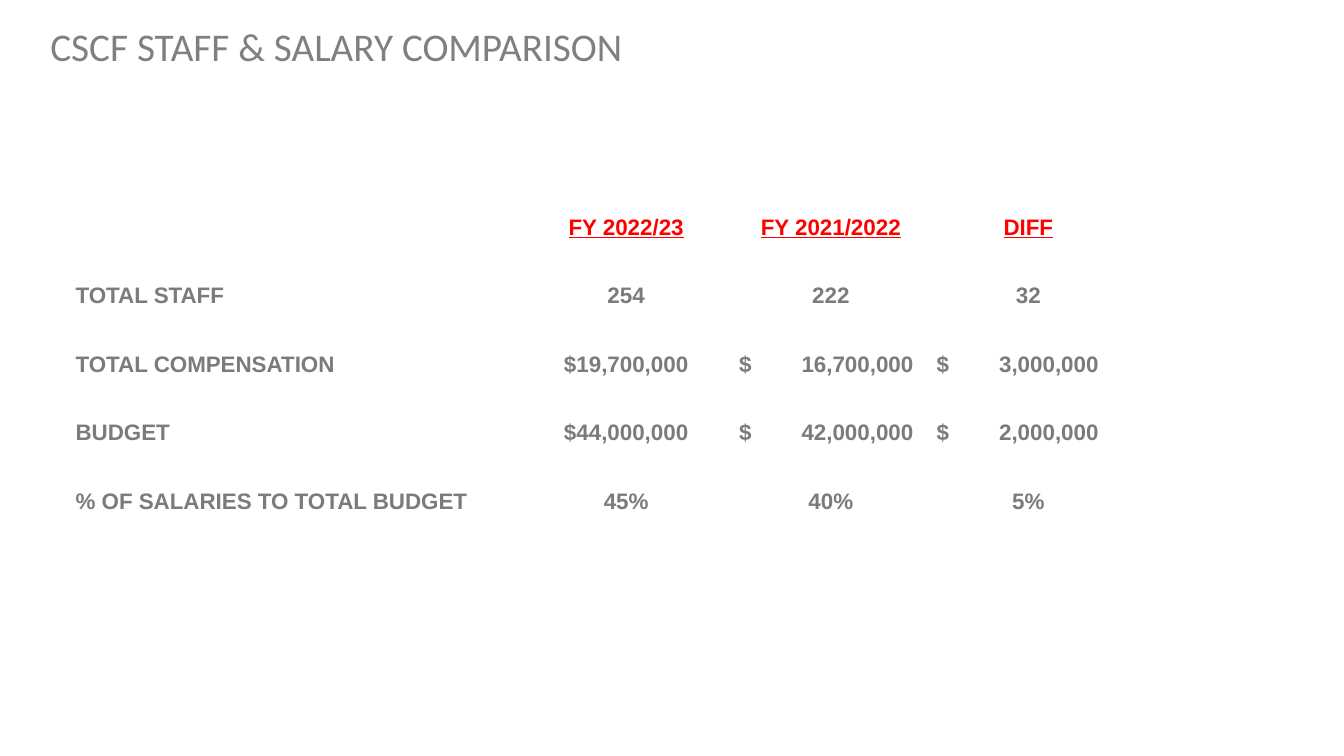
from lxml import etree
from pptx import Presentation
from pptx.dml.color import RGBColor
from pptx.enum.text import MSO_ANCHOR, PP_ALIGN
from pptx.oxml.ns import qn
from pptx.util import Inches, Pt

LEFT, CENTER = PP_ALIGN.LEFT, PP_ALIGN.CENTER
MIDDLE, BOTTOM = MSO_ANCHOR.MIDDLE, MSO_ANCHOR.BOTTOM
TITLE_GREY = RGBColor(0x80, 0x80, 0x80)
TEXT_GREY = RGBColor(0x7B, 0x7B, 0x7B)
RED = RGBColor(0xFF, 0x00, 0x00)

COLUMN_WIDTHS = [0.5, 3.92, 2.1, 1.96, 1.96]
HEADER_HEIGHT, ROW_HEIGHT, LAST_HEIGHT = 0.52, 0.34, 0.23
HEADINGS = ["FY 2022/23", "FY 2021/2022", "DIFF"]
FIGURES = [
    ["TOTAL STAFF", "254", "222", "32"],
    ["TOTAL COMPENSATION", "$19,700,000", "$\t16,700,000", "$\t3,000,000"],
    ["BUDGET", "$44,000,000", "$\t42,000,000", "$\t2,000,000"],
    ["% OF SALARIES TO TOTAL BUDGET", "45%", "40%", "5%"],
]


class SlideBuilder:
    title_font, title_size = "Calibri", Pt(28)
    table_font, table_size = "Arial", Pt(16)

    def __init__(self, deck):
        self.page = deck.slides.add_slide(deck.slide_layouts[5])

    def title(self, text, left, top, width, height):
        box = self.page.shapes.title
        box.left, box.top = Inches(left), Inches(top)
        box.width, box.height = Inches(width), Inches(height)
        frame = box.text_frame
        frame.text = text
        frame.word_wrap = True
        frame.vertical_anchor = MIDDLE
        para = frame.paragraphs[0]
        para.alignment = LEFT
        para.line_spacing = 0.9
        font = para.runs[0].font
        font.name, font.size = self.title_font, self.title_size
        font.color.rgb = TITLE_GREY

    def table(self, left, top, widths, heights):
        frame = self.page.shapes.add_table(
            len(heights), len(widths), Inches(left), Inches(top),
            Inches(sum(widths)), Inches(sum(heights)))
        table = frame.table
        table.first_row = table.horz_banding = False
        for column, width in zip(table.columns, widths):
            column.width = Inches(width)
        for row, height in zip(table.rows, heights):
            row.height = Inches(height)
        for cell in table.iter_cells():
            cell.fill.background()
            cell.vertical_anchor = BOTTOM
            cell.margin_left = cell.margin_right = cell.margin_top = Inches(0.01)
            cell.margin_bottom = 0
            cell.text_frame.paragraphs[0].font.size = Pt(12)
        return table

    def cell(self, cell, text, color=TEXT_GREY, align=CENTER, underline=False):
        cell.text_frame.text = text
        para = cell.text_frame.paragraphs[0]
        if "\t" in text:
            align = LEFT
            cell.margin_left = Inches(0.07)
            self.tab_stop(para, 0.62)
        para.alignment = align
        font = para.font
        font.name, font.size = self.table_font, self.table_size
        font.bold, font.underline = True, underline
        font.color.rgb = color
        for span in para.runs:
            span.font.name, span.font.size = self.table_font, self.table_size
            span.font.bold, span.font.underline = True, underline
            span.font.color.rgb = color

    def tab_stop(self, para, position):
        properties = para._p.get_or_add_pPr()
        stops = etree.SubElement(properties, qn("a:tabLst"))
        etree.SubElement(stops, qn("a:tab"), pos=str(Inches(position)), algn="l")


def main():
    deck = Presentation()
    deck.slide_width, deck.slide_height = Inches(13.33), Inches(7.5)
    slide = SlideBuilder(deck)
    slide.title("CSCF STAFF & SALARY COMPARISON", 0.4, 0.22, 12.5, 0.52)

    heights = [HEADER_HEIGHT] + [ROW_HEIGHT] * (2 * len(FIGURES)) + [LAST_HEIGHT]
    table = slide.table(0.74, 1.86, COLUMN_WIDTHS, heights)
    for column, heading in enumerate(HEADINGS, start=2):
        slide.cell(table.cell(0, column), heading, RED, underline=True)
    for index, (label, *values) in enumerate(FIGURES, start=1):
        row = 2 * index
        table.cell(row, 0).merge(table.cell(row, 1))
        slide.cell(table.cell(row, 0), label, align=LEFT)
        for column, value in enumerate(values, start=2):
            slide.cell(table.cell(row, column), value)

    deck.save("out.pptx")


if __name__ == "__main__":
    main()
